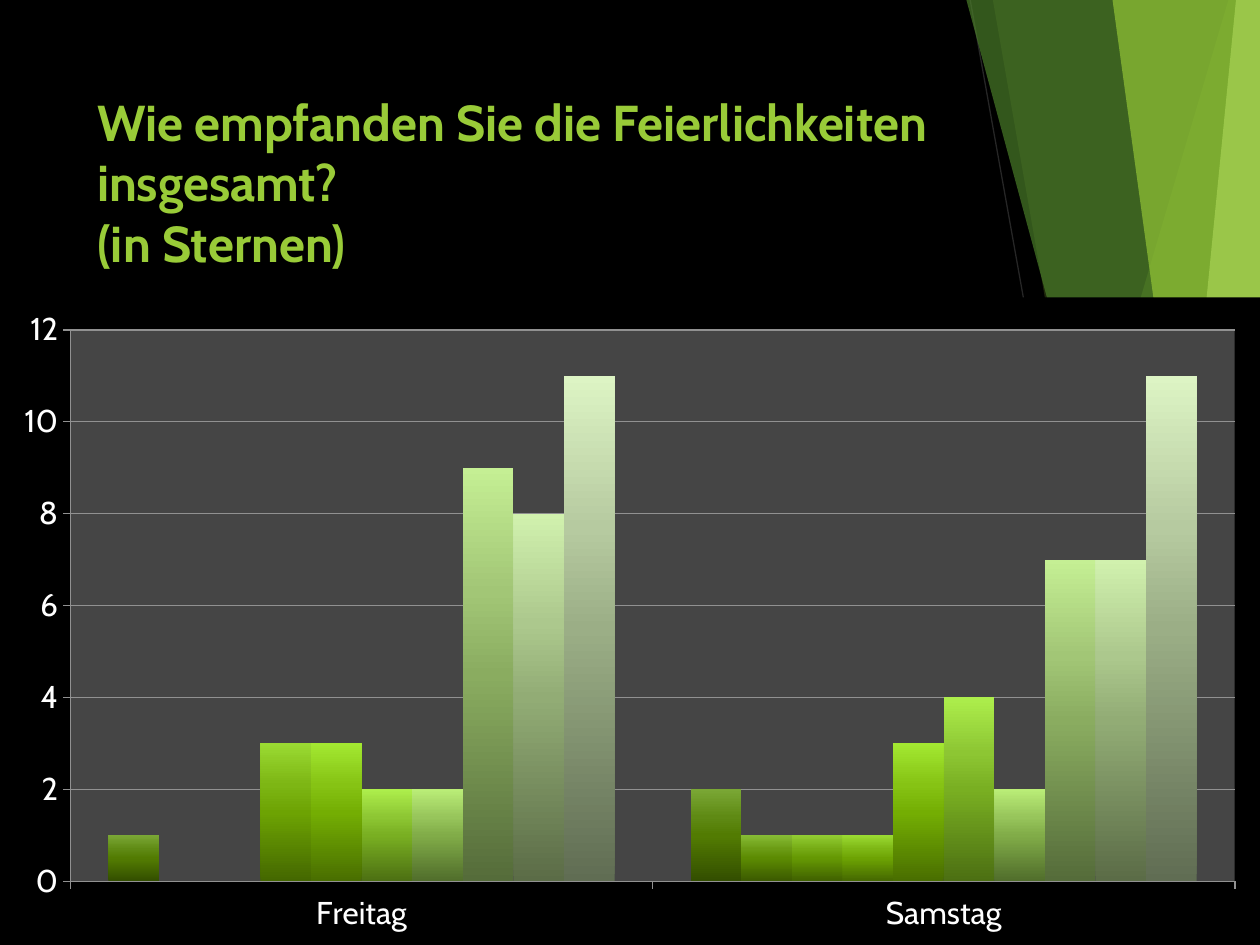
from lxml import etree
from pptx import Presentation
from pptx.chart.data import CategoryChartData
from pptx.dml.color import RGBColor
from pptx.enum.chart import XL_CHART_TYPE, XL_TICK_MARK
from pptx.enum.shapes import MSO_CONNECTOR
from pptx.enum.text import MSO_ANCHOR, MSO_AUTO_SIZE, PP_ALIGN
from pptx.oxml import parse_xml
from pptx.oxml.ns import nsdecls, qn
from pptx.util import Inches, Pt

COLUMN_CLUSTERED = XL_CHART_TYPE.COLUMN_CLUSTERED
TICK_OUT, TICK_NONE = XL_TICK_MARK.OUTSIDE, XL_TICK_MARK.NONE
STRAIGHT = MSO_CONNECTOR.STRAIGHT
TOP, LEFT = MSO_ANCHOR.TOP, PP_ALIGN.LEFT
NO_AUTOFIT = MSO_AUTO_SIZE.NONE

FONT = "Cabin"
COLORS = {
    "background": "000000", "plot": "454545", "axis": "919191",
    "text": "FFFFFF", "accent": "99CB38", "hairline": "262626",
    "dark_green": "4A7C29", "pale_green": "C2E088",
}

# Facets over the full slide height: x of top left, bottom left; colour, opacity %
FACETS = [
    (9.75, 7.54, "accent", 30),
    (7.88, 9.19, "accent", 20),
    (7.67, 9.7, "dark_green", 70),
    (9.81, 9.07, "pale_green", 70),
    (8.83, 9.86, "accent", 65),
]

CATEGORIES = ["Freitag", "Samstag"]
STOPS = (0, 50, 70, 100)
# Values for both days and the gradient from bottom to top, one row per star rating
RATINGS = [
    ((1, 2), ("334E00", "527B02", "5F8A14", "7AA735")),
    ((0, 1), ("3A5800", "5C8B02", "6B9B14", "86BB34")),
    ((0, 1), ("3F6000", "659803", "75AA14", "91CC32")),
    ((3, 1), ("446700", "6DA303", "7DB614", "9ADA32")),
    ((3, 3), ("496E00", "74AE03", "86C314", "A3E831")),
    ((2, 4), ("4C6F12", "79AF22", "8DC633", "ADEE4C")),
    ((2, 2), ("506D2B", "81AC48", "97C55B", "BAED77")),
    ((9, 7), ("556C3A", "8AAC60", "A2C676", "C5EF94")),
    ((8, 7), ("5B6C47", "92AC75", "ACC88D", "D1F1AE")),
    ((11, 11), ("606D53", "9BAE86", "B6CAA0", "DDF4C4")),
]


def rgb(name):
    return RGBColor.from_string(COLORS[name])


def style_font(font, size, color):
    font.name, font.size = FONT, Pt(size)
    font.color.rgb = rgb(color)


def add_facets(slide, left, top, width, height):
    right, bottom = left + width, top + height
    # Hairline behind the facets
    line = slide.shapes.add_connector(
        STRAIGHT, left + Inches(7.7), top, left + Inches(9.04), bottom)
    line.line.color.rgb, line.line.width = rgb("hairline"), Pt(0.75)
    etree.SubElement(line.element.spPr, qn("a:effectLst"))
    # Translucent facets reaching to the right edge
    for top_x, bottom_x, color, opacity in FACETS:
        builder = slide.shapes.build_freeform(left + Inches(top_x), top)
        builder.add_line_segments(
            [(left + Inches(bottom_x), bottom), (right, bottom), (right, top)])
        shape = builder.convert_to_shape()
        shape.shadow.inherit = False
        shape.fill.solid()
        shape.fill.fore_color.rgb = rgb(color)
        shape.line.fill.background()
        color_node = shape.element.spPr.find(".//" + qn("a:srgbClr"))
        etree.SubElement(color_node, qn("a:alpha"), val=str(opacity * 1000))


def add_title(slide, left, top, width, height):
    title = slide.shapes.title
    title.left, title.top, title.width, title.height = left, top, width, height
    frame = title.text_frame
    frame.word_wrap, frame.auto_size = True, NO_AUTOFIT
    frame.vertical_anchor = TOP
    frame.text = "Wie empfanden Sie die Feierlichkeiten insgesamt? \v(in Sternen)"
    paragraph = frame.paragraphs[0]
    paragraph.alignment, paragraph.line_spacing = LEFT, 1.0
    style_font(paragraph.font, 28.8, "accent")
    paragraph.font.bold = True


def area_fill(color):
    return parse_xml(
        f'<c:spPr {nsdecls("c", "a")}><a:solidFill><a:srgbClr val="{COLORS[color]}"/>'
        "</a:solidFill><a:ln><a:noFill/></a:ln></c:spPr>")


def inner_layout(x, y, width, height):
    sizes = "".join(f'<c:{tag} val="{value}"/>' for tag, value in
                    zip("xywh", (x, y, width, height)))
    return parse_xml(
        f'<c:layout {nsdecls("c")}><c:manualLayout><c:layoutTarget val="inner"/>'
        f'<c:xMode val="edge"/><c:yMode val="edge"/>{sizes}</c:manualLayout></c:layout>')


def fill_series(series, colors):
    fill = series.format.fill
    fill.gradient()
    fill.gradient_angle = 90
    stops = series._element.find(".//" + qn("a:gsLst"))
    stops.clear()
    for position, color in zip(STOPS, colors):
        stop = etree.SubElement(stops, qn("a:gs"), pos=str(position * 1000))
        etree.SubElement(stop, qn("a:srgbClr"), val=color)


def add_ratings_chart(slide, left, top, width, height):
    data = CategoryChartData()
    data.categories = CATEGORIES
    for number, (values, _) in enumerate(RATINGS, 1):
        data.add_series(f"Series {number}", values)
    chart = slide.shapes.add_chart(
        COLUMN_CLUSTERED, left, top, width, height, data).chart
    chart.has_legend = chart.has_title = False
    style_font(chart.font, 18, "text")

    # Columns
    plot = chart.plots[0]
    plot.gap_width, plot.overlap, plot.vary_by_categories = 150, 0, False
    for series, (_, colors) in zip(plot.series, RATINGS):
        fill_series(series, colors)

    # Axes and gridlines
    value_axis = chart.value_axis
    value_axis.minimum_scale, value_axis.maximum_scale = 0, 12
    value_axis.major_unit = 2
    value_axis.has_major_gridlines = True
    for axis in (chart.category_axis, value_axis):
        axis.major_tick_mark, axis.minor_tick_mark = TICK_OUT, TICK_NONE
        style_font(axis.tick_labels.font, 18, "text")
    for part in (chart.category_axis, value_axis, value_axis.major_gridlines):
        part.format.line.color.rgb = rgb("axis")
        part.format.line.width = Pt(1)

    # Plot position and area fills
    plot_area = chart.element.chart.plotArea
    for layout in plot_area.findall(qn("c:layout")):
        plot_area.remove(layout)
    plot_area.insert(0, inner_layout(0.056, 0.05, 0.924, 0.852))
    plot_area.append(area_fill("plot"))
    chart.element.chart.addnext(area_fill("background"))


def main():
    presentation = Presentation()
    presentation.slide_width, presentation.slide_height = Inches(10), Inches(7.5)
    slide = presentation.slides.add_slide(presentation.slide_layouts[5])
    slide.background.fill.solid()
    slide.background.fill.fore_color.rgb = rgb("background")

    add_facets(slide, 0, 0, Inches(10), Inches(7.5))
    add_title(slide, Inches(0.67), Inches(0.67), Inches(6.94), Inches(1.44))
    add_ratings_chart(slide, 0, Inches(2.36), Inches(10), Inches(5.14))
    presentation.save("out.pptx")


if __name__ == "__main__":
    main()
